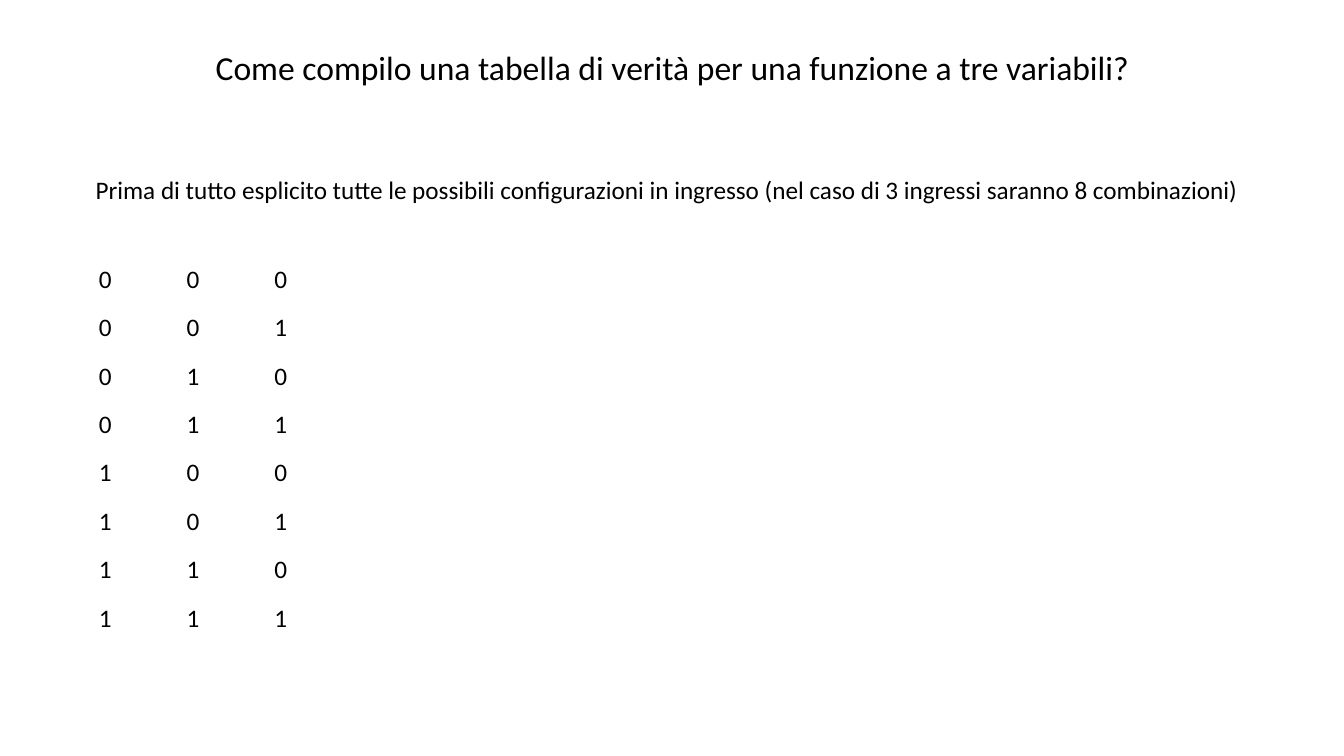
from itertools import product

from pptx import Presentation
from pptx.dml.color import RGBColor
from pptx.enum.text import MSO_AUTO_SIZE, PP_ALIGN
from pptx.util import Cm, Pt

COLORS = {"text": "000000"}
FONT = "Calibri"
TITLE = "Come compilo una tabella di verità per una funzione a tre variabili?"
INTRO = ("Prima di tutto esplicito tutte le possibili configurazioni in ingresso "
         "(nel caso di 3 ingressi saranno 8 combinazioni)")


def write(para, text, size):
    para.text = text
    para.font.name = FONT
    para.font.size = Pt(size)
    para.font.color.rgb = RGBColor.from_string(COLORS["text"])


def add_text(slide, box, text, size, wrap=True):
    frame = slide.shapes.add_textbox(*map(Cm, box)).text_frame
    frame.word_wrap = wrap
    para = frame.paragraphs[0]
    write(para, text, size)
    return frame, para


def add_grid(slide, left, top, widths, height, rows):
    size = Cm(sum(widths)), Cm(height * len(rows))
    table = slide.shapes.add_table(
        len(rows), len(widths), Cm(left), Cm(top), *size).table
    table.first_row = False
    table.horz_banding = False
    for col, width in zip(table.columns, widths):
        col.width = Cm(width)
    for r, row in enumerate(rows):
        table.rows[r].height = Cm(height)
        for c, bit in enumerate(row):
            cell = table.cell(r, c)
            cell.fill.background()
            write(cell.text_frame.paragraphs[0], bit, 18)


def main():
    deck = Presentation()
    deck.slide_width, deck.slide_height = Cm(33.87), Cm(19.05)
    slide = deck.slides.add_slide(deck.slide_layouts[6])

    # Title
    _, head = add_text(slide, (4.37, 1.17, 25.15, 2.44), TITLE, 24)
    head.alignment = PP_ALIGN.CENTER
    head.line_spacing = 0.9

    # Introduction
    frame, _ = add_text(slide, (2.16, 4.27, 29.51, 1.02), INTRO, 18, wrap=False)
    frame.auto_size = MSO_AUTO_SIZE.SHAPE_TO_FIT_TEXT

    # All input combinations, in counting order
    rows = list(product("01", repeat=3))
    add_grid(slide, 2.24, 6.53, (2.21, 2.21, 2.26), 1.22, rows)

    deck.save("out.pptx")


if __name__ == "__main__":
    main()
